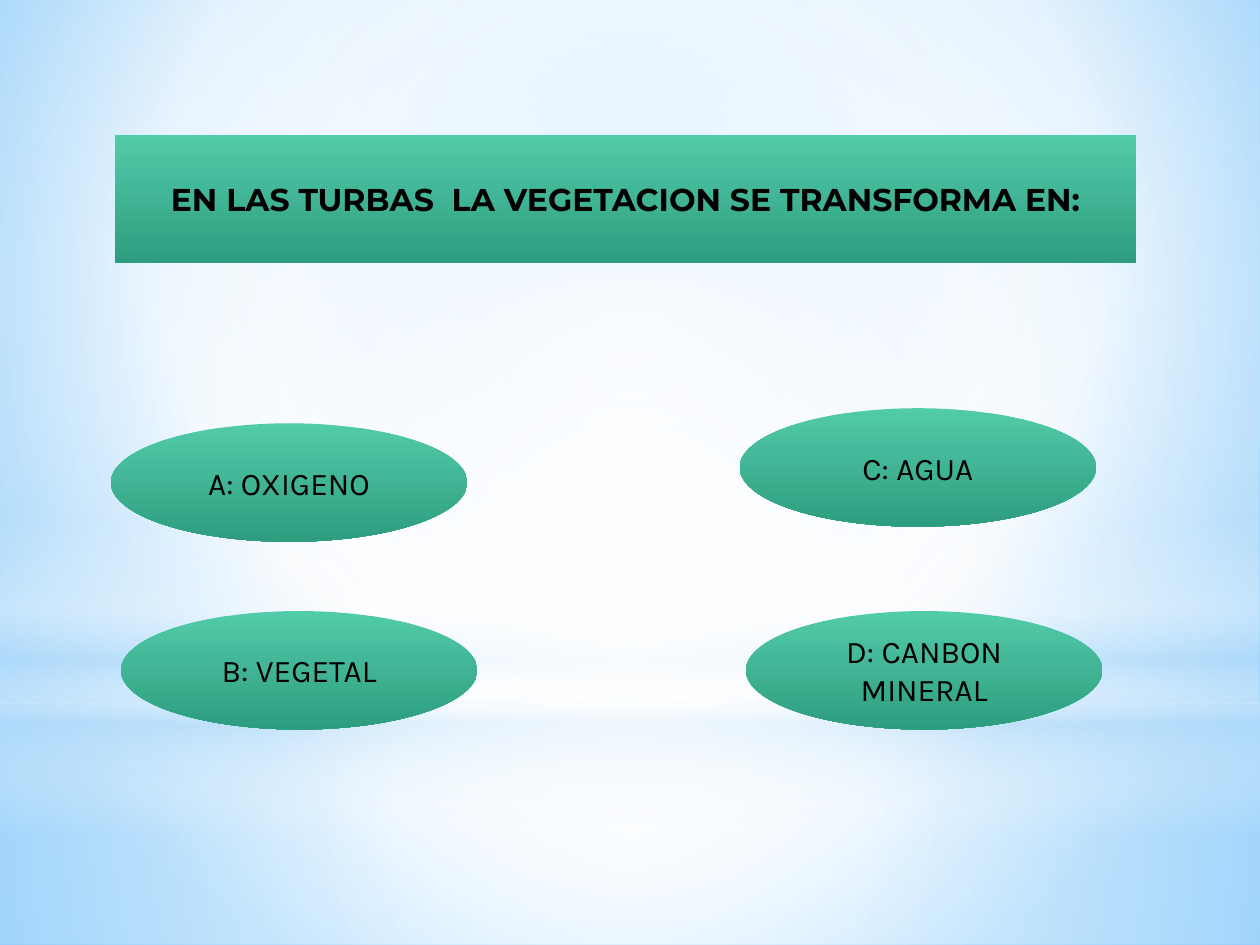
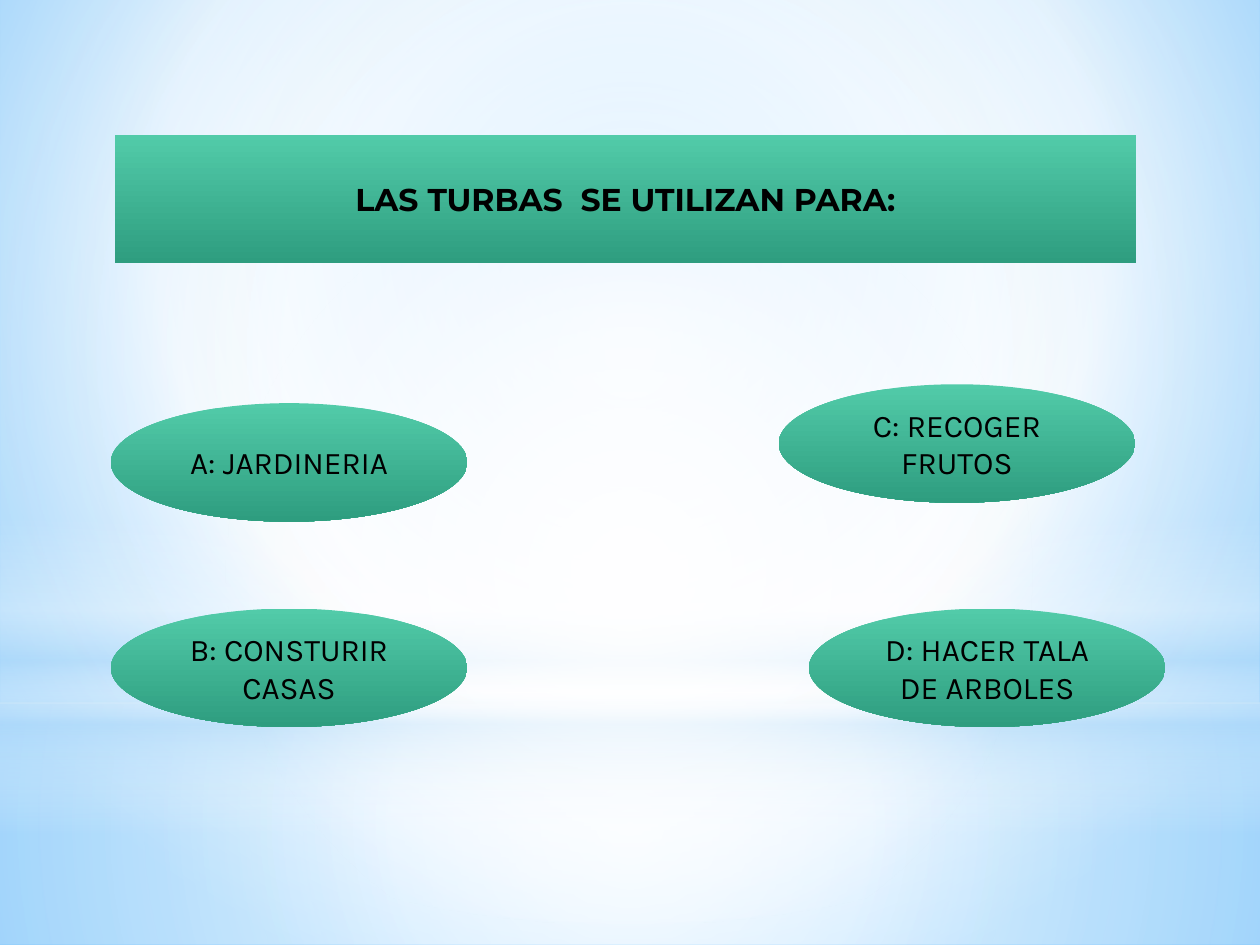
from dataclasses import dataclass
from typing import NamedTuple

from lxml.etree import SubElement
from pptx import Presentation
from pptx.dml.color import RGBColor
from pptx.enum.shapes import MSO_SHAPE as Shape
from pptx.enum.text import MSO_ANCHOR as Anchor, MSO_AUTO_SIZE as AutoSize, PP_ALIGN as Align
from pptx.oxml.ns import qn
from pptx.util import Inches, Pt


@dataclass(frozen=True)
class Theme:
    white: str = "FFFFFF"
    haze: str = "B4DCFA"
    ink: str = "000000"
    sky: tuple = ((0, "9ED5FF"), (60, "FFFFFF"), (100, "5BB9FF"))
    green: tuple = ((0, "52CBA9"), (100, "2E9D7F"))
    title_font: str = "Montserrat"
    answer_font: str = "Karla"
    text_size: int = 18


class Box(NamedTuple):
    """Left, top, width and height in grid columns and rows."""
    left: float
    top: float
    width: float
    height: float


THEME = Theme()
WIDTH, HEIGHT = Inches(10), Inches(7.5)
COLUMNS, ROWS = 100, 75
CENTER = (50, 50, 50, 50)
QUESTION_BOX = Box(9.1, 10.7, 81.1, 10.2)
ANSWER_WIDTH, ANSWER_HEIGHT = 28.3, 9.4
HORIZON = 55.8

QUIZ = [
    ("EN LAS TURBAS  LA VEGETACION SE TRANSFORMA EN:", [
        ("A: OXIGENO", 8.8, 33.6),
        ("B: VEGETAL", 9.6, 48.5),
        ("D: CANBON MINERAL", 59.2, 48.5),
        ("C: AGUA", 58.7, 32.4),
    ]),
    ("LAS TURBAS  SE UTILIZAN PARA:", [
        ("A: JARDINERIA", 8.8, 32),
        ("B: CONSTURIR CASAS", 8.8, 48.3),
        ("D: HACER TALA DE ARBOLES", 64.2, 48.3),
        ("C: RECOGER FRUTOS", 61.8, 30.5),
    ]),
]


def to_lengths(box):
    column, row = WIDTH / COLUMNS, HEIGHT / ROWS
    return [round(size * unit) for size, unit in zip(box, (column, row, column, row))]


def paint_gradient(owner, fill, stops, focus=None):
    """Stops are (position, colour[, opacity]); a focus makes the gradient circular."""
    fill.gradient()
    gradient = owner.element.xpath(".//a:gradFill")[0]
    for child in list(gradient):
        gradient.remove(child)
    stop_list = SubElement(gradient, qn("a:gsLst"))
    for position, color, *opacity in stops:
        stop = SubElement(stop_list, qn("a:gs"), pos=str(position * 1000))
        tint = SubElement(stop, qn("a:srgbClr"), val=color)
        if opacity:
            SubElement(tint, qn("a:alpha"), val=str(opacity[0] * 1000))
    if focus:
        circle = SubElement(gradient, qn("a:path"), path="circle")
        edges = {side: str(share * 1000) for side, share in zip("ltrb", focus)}
        SubElement(circle, qn("a:fillToRect"), **edges)
    else:
        SubElement(gradient, qn("a:lin"), ang="5400000", scaled="0")


def add_gradient_shape(page, kind, box, stops, focus=None):
    shape = page.shapes.add_shape(kind, *to_lengths(box))
    shape.shadow.inherit = False
    shape.line.fill.background()
    paint_gradient(shape, shape.fill, stops, focus)
    return shape


def write_text(shape, text, *, font, bold=False, size=THEME.text_size, color=THEME.ink):
    frame = shape.text_frame
    frame.word_wrap = True
    frame.auto_size = AutoSize.NONE
    frame.vertical_anchor = Anchor.MIDDLE
    para = frame.paragraphs[0]
    para.alignment = Align.CENTER
    span = para.add_run()
    span.text = text
    span.font.name, span.font.size, span.font.bold = font, Pt(size), bold
    span.font.color.rgb = RGBColor.from_string(color)


def build_backdrop(master, page):
    """Draw the shared sky on a page, then move its layers to the master."""
    white, haze = THEME.white, THEME.haze
    paint_gradient(master, master.background.fill, THEME.sky, (20, 10, 20, 60))
    layers = [
        # Ground and sky
        (Shape.RECTANGLE, Box(0, HORIZON, COLUMNS, ROWS - HORIZON),
         ((0, white, 91), (37, white, 76), (100, haze, 79)), CENTER),
        (Shape.RECTANGLE, Box(0, 0, COLUMNS, HORIZON),
         ((0, white, 89), (48, white, 62), (100, haze, 79)), CENTER),
        # Band of light on the horizon
        (Shape.RECTANGLE, Box(0, 41.2, COLUMNS, 25),
         ((0, white, 0), (29, white, 30), (45, haze, 40),
          (55, white, 26), (65, haze, 60), (100, white, 0)), None),
        # Central glow
        (Shape.OVAL, Box(0, 17.5, COLUMNS, HORIZON),
         ((0, white, 100), (56, white, 0)), CENTER),
    ]
    tree = master.shapes.element
    for order, layer in enumerate(layers):
        element = add_gradient_shape(page, *layer).element
        element.xpath("./p:nvSpPr/p:cNvPr")[0].set("id", str(100 + order))
        tree.insert(2 + order, element)


def build_question(page, box, text):
    title = page.shapes.title
    title.left, title.top, title.width, title.height = to_lengths(box)
    paint_gradient(title, title.fill, THEME.green)
    write_text(title, text, font=THEME.title_font, bold=True)


def build_answer(page, box, text):
    oval = add_gradient_shape(page, Shape.OVAL, box, THEME.green)
    write_text(oval, text, font=THEME.answer_font)


def build_quiz_page(page, question, answers):
    build_question(page, QUESTION_BOX, question)
    for text, left, top in answers:
        build_answer(page, Box(left, top, ANSWER_WIDTH, ANSWER_HEIGHT), text)


def main():
    deck = Presentation()
    deck.slide_width, deck.slide_height = WIDTH, HEIGHT
    title_only = deck.slide_layouts.get_by_name("Title Only")
    pages = [deck.slides.add_slide(title_only) for _ in QUIZ]
    build_backdrop(deck.slide_master, pages[0])
    for page, (question, answers) in zip(pages, QUIZ):
        build_quiz_page(page, question, answers)
    deck.save("out.pptx")


if __name__ == "__main__":
    main()
